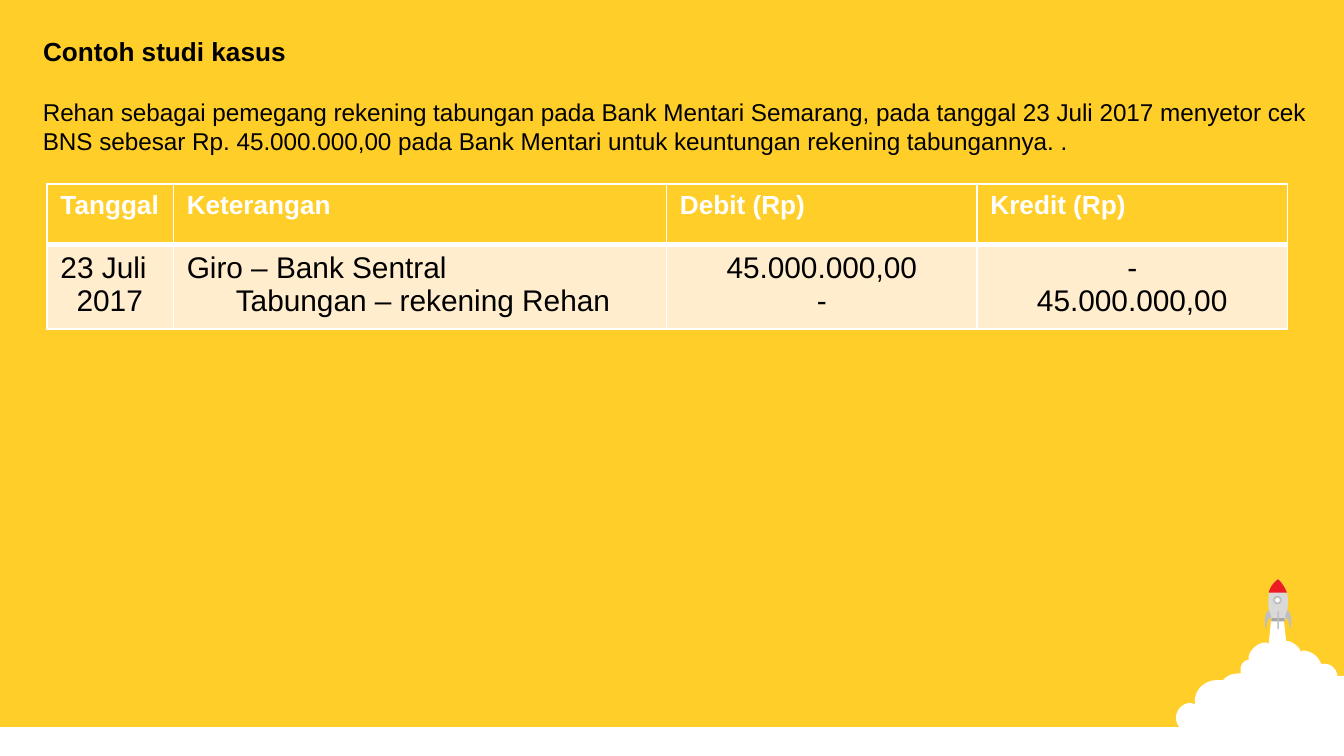
from dataclasses import dataclass

import pptx
import pptx.dml.color
import pptx.enum.shapes
import pptx.enum.text
import pptx.oxml
import pptx.oxml.ns
import pptx.util

RGBColor = pptx.dml.color.RGBColor
SHAPE = pptx.enum.shapes.MSO_SHAPE
ALIGN = pptx.enum.text.PP_ALIGN

YELLOW = RGBColor(0xFF, 0xCE, 0x29)
CREAM = RGBColor(0xFF, 0xED, 0xCD)
WHITE = RGBColor(0xFF, 0xFF, 0xFF)
BLACK = RGBColor(0, 0, 0)
RED = RGBColor(0xED, 0x1C, 0x24)
LIGHT_GRAY = RGBColor(0xD9, 0xD9, 0xD9)
SILVER = RGBColor(0xBF, 0xBF, 0xBF)
GRAY = RGBColor(0xA6, 0xA6, 0xA6)

FONT = "Arial"
COLUMNS, ROWS = 100, 56.25
CURVE_STEPS = 8
ROCKET_AXIS = 95.1


@dataclass(frozen=True)
class Outline:
    start: tuple[float, float]
    segments: tuple[tuple[float, ...], ...]
    color: RGBColor

    def mirrored(self, axis: float) -> "Outline":
        def flip(values: tuple[float, ...]) -> tuple[float, ...]:
            return tuple(2 * axis - value if index % 2 == 0 else value
                         for index, value in enumerate(values))
        return Outline(flip(self.start), tuple(map(flip, self.segments)), self.color)


@dataclass(frozen=True)
class Preset:
    kind: SHAPE
    box: tuple[float, float, float, float]
    color: RGBColor
    line: RGBColor | None = None


@dataclass(frozen=True)
class Line:
    text: str
    indent: float = 0


@dataclass(frozen=True)
class TableColumn:
    width: float
    heading: str
    lines: tuple[Line, ...]
    align: ALIGN = ALIGN.LEFT


CLOUD = Outline((94.6, 45.9), (
    (95.5, 45.9), (95.7, 47.7), (95.9, 47.7),
    (96.2, 47.8, 96.5, 48, 96.7, 48.3), (96.8, 48.5), (96.9, 48.4),
    (97.5, 48.4, 98.1, 48.8, 98.3, 49.4), (98.6, 49.4),
    (99, 49.4, 99.4, 49.7, 99.5, 50.2), (99.5, 50.3), (100, 50.3),
    (100, 56.1), (93.4, 56.1), (92.3, 56.1, 91.7, 55.6, 91.3, 55.1),
    (91.1, 55.3, 90.7, 55.4, 90.4, 55.3), (90, 55.2, 89.4, 55, 89.3, 54.5),
    (89.2, 54.4), (89.1, 54.5, 88.9, 54.5, 88.6, 54.5),
    (88, 54.5, 87.5, 54, 87.5, 53.4), (87.5, 52.8, 88, 52.3, 88.6, 52.3),
    (88.9, 52.4), (88.9, 52.2), (88.9, 51.3, 89.6, 50.6, 90.6, 50.6),
    (91, 50.6), (91.1, 50.5), (91.4, 50.2, 91.8, 50.1, 92.3, 50.1),
    (92.3, 49.8), (92.3, 49.5, 92.5, 49.2, 92.8, 49.1), (92.9, 49.1),
    (92.9, 48.9), (93, 48.3, 93.6, 47.8, 94.2, 47.8), (94.4, 47.9),
), WHITE)
BODY = Outline((94.6, 46.2), (
    (94.4, 45.3, 94, 44, 95.1, 43.1), (96.2, 44.1, 95.8, 45.4, 95.6, 46.2),
), LIGHT_GRAY)
NOSE = Outline((95.1, 43.1), (
    (95.4, 43.4, 95.6, 43.7, 95.75, 44.1), (94.4, 44.1),
    (94.5, 43.7, 94.7, 43.4, 95.1, 43.1),
), RED)
FIN = Outline((94.4, 45.4), (
    (94.6, 45.9), (94.2, 46.1, 94.3, 46.6, 94.2, 46.8),
    (94.1, 46.5, 94, 45.7, 94.4, 45.4),
), SILVER)
ROCKET = (
    CLOUD,
    BODY,
    Preset(SHAPE.RECTANGLE, (94.6, 46, 1, 0.25), GRAY),
    NOSE,
    Preset(SHAPE.OVAL, (94.8, 44.4, 0.5, 0.5), WHITE, SILVER),
    Preset(SHAPE.RECTANGLE, (95.05, 45.5, 0.1, 1.3), SILVER),
    FIN,
    FIN.mirrored(ROCKET_AXIS),
)
GROUND = Preset(SHAPE.RECTANGLE, (0, 54.1, COLUMNS, ROWS - 54.1), WHITE)

AMOUNT = Line("45.000.000,00")
NOTHING = Line("-")
JOURNAL = (
    TableColumn(9.4, "Tanggal", (Line("23 Juli"), Line("2017", 1.2))),
    TableColumn(36.7, "Keterangan", (Line("Giro – Bank Sentral"),
                                     Line("Tabungan – rekening Rehan", 3.65))),
    TableColumn(23.1, "Debit (Rp)", (AMOUNT, NOTHING), ALIGN.CENTER),
    TableColumn(23.1, "Kredit (Rp)", (NOTHING, AMOUNT), ALIGN.CENTER),
)
JOURNAL_ROWS = (4.5, 6.3)
CASE = ("Rehan sebagai pemegang rekening tabungan pada Bank Mentari Semarang, "
        "pada tanggal 23 Juli 2017 menyetor cek BNS sebesar Rp. 45.000.000,00 "
        "pada Bank Mentari untuk keuntungan rekening tabungannya. .")


def grid(cells: float) -> int:
    return pptx.util.Inches(cells / 10)


def paint(shape, color: RGBColor, line: RGBColor | None = None) -> None:
    shape.shadow.inherit = False
    shape.fill.solid()
    shape.fill.fore_color.rgb = color
    if line is None:
        shape.line.fill.background()
    else:
        shape.line.color.rgb = line
        shape.line.width = pptx.util.Pt(1)


def draw_preset(shapes, preset: Preset) -> None:
    shape = shapes.add_shape(preset.kind, *map(grid, preset.box))
    paint(shape, preset.color, preset.line)


def draw_outline(shapes, outline: Outline) -> None:
    points = [outline.start]
    for segment in outline.segments:
        if len(segment) == 2:
            points.append(segment)
            continue
        x0, y0 = points[-1]
        x1, y1, x2, y2, x3, y3 = segment
        for step in range(1, CURVE_STEPS + 1):
            t = step / CURVE_STEPS
            a, b, c, d = (1 - t) ** 3, 3 * t * (1 - t) ** 2, 3 * t * t * (1 - t), t ** 3
            points.append((a * x0 + b * x1 + c * x2 + d * x3,
                           a * y0 + b * y1 + c * y2 + d * y3))
    vertices = [(grid(x), grid(y)) for x, y in points]
    builder = shapes.build_freeform(*vertices[0])
    builder.add_line_segments(vertices[1:], close=True)
    paint(builder.convert_to_shape(), outline.color)


def format_paragraph(paragraph, size: float, color: RGBColor, bold: bool = False,
                     align: ALIGN = ALIGN.LEFT) -> None:
    paragraph.alignment = align
    paragraph.font.name = FONT
    paragraph.font.size = pptx.util.Pt(size)
    paragraph.font.bold = bold
    paragraph.font.color.rgb = color


def fill_cell(cell, color: RGBColor, top: float, bottom: float) -> None:
    properties = cell._tc.get_or_add_tcPr()
    for side, width in (("L", 1), ("R", 1), ("T", top), ("B", bottom)):
        properties.append(pptx.oxml.parse_xml(
            f'<a:ln{side} {pptx.oxml.ns.nsdecls("a")} w="{pptx.util.Pt(width)}">'
            f'<a:solidFill><a:srgbClr val="{WHITE}"/></a:solidFill></a:ln{side}>'))
    cell.fill.solid()
    cell.fill.fore_color.rgb = color


def draw_journal(shapes, left: float, top: float) -> None:
    width = sum(column.width for column in JOURNAL)
    table = shapes.add_table(len(JOURNAL_ROWS), len(JOURNAL), grid(left), grid(top),
                             grid(width), grid(sum(JOURNAL_ROWS))).table
    for row, height in zip(table.rows, JOURNAL_ROWS):
        row.height = grid(height)
    for index, column in enumerate(JOURNAL):
        table.columns[index].width = grid(column.width)
        heading, entry = table.cell(0, index), table.cell(1, index)
        fill_cell(heading, YELLOW, 1, 3)
        fill_cell(entry, CREAM, 3, 1)
        heading.text = column.heading
        format_paragraph(heading.text_frame.paragraphs[0], 14, WHITE, True)
        entry.text = "\n".join(line.text for line in column.lines)
        for paragraph, line in zip(entry.text_frame.paragraphs, column.lines):
            format_paragraph(paragraph, 16, BLACK, align=column.align)
            if line.indent:
                paragraph._p.get_or_add_pPr().set("marL", str(grid(line.indent)))


def write_text(shape, text: str, size: float, bold: bool = False) -> None:
    frame = shape.text_frame
    frame.word_wrap = True
    frame.auto_size = pptx.enum.text.MSO_AUTO_SIZE.NONE
    frame.vertical_anchor = pptx.enum.text.MSO_ANCHOR.TOP
    frame.text = text
    format_paragraph(frame.paragraphs[0], size, BLACK, bold)


def main() -> None:
    presentation = pptx.Presentation()
    presentation.slide_width, presentation.slide_height = grid(COLUMNS), grid(ROWS)
    slide = presentation.slides.add_slide(presentation.slide_layouts[5])
    slide.background.fill.solid()
    slide.background.fill.fore_color.rgb = YELLOW

    draw_preset(slide.shapes, GROUND)
    rocket = slide.shapes.add_group_shape()
    for part in ROCKET:
        draw = draw_outline if isinstance(part, Outline) else draw_preset
        draw(rocket.shapes, part)

    title = slide.shapes.title
    title.left, title.top, title.width, title.height = map(grid, (2.2, 2.1, 96.5, 3.3))
    write_text(title, "Contoh studi kasus", 14, True)
    case = slide.shapes.add_textbox(*map(grid, (2.2, 6.75, 96.5, 5.45)))
    write_text(case, CASE, 13)
    draw_journal(slide.shapes, 3.5, 13.7)
    presentation.save("out.pptx")


if __name__ == "__main__":
    main()
